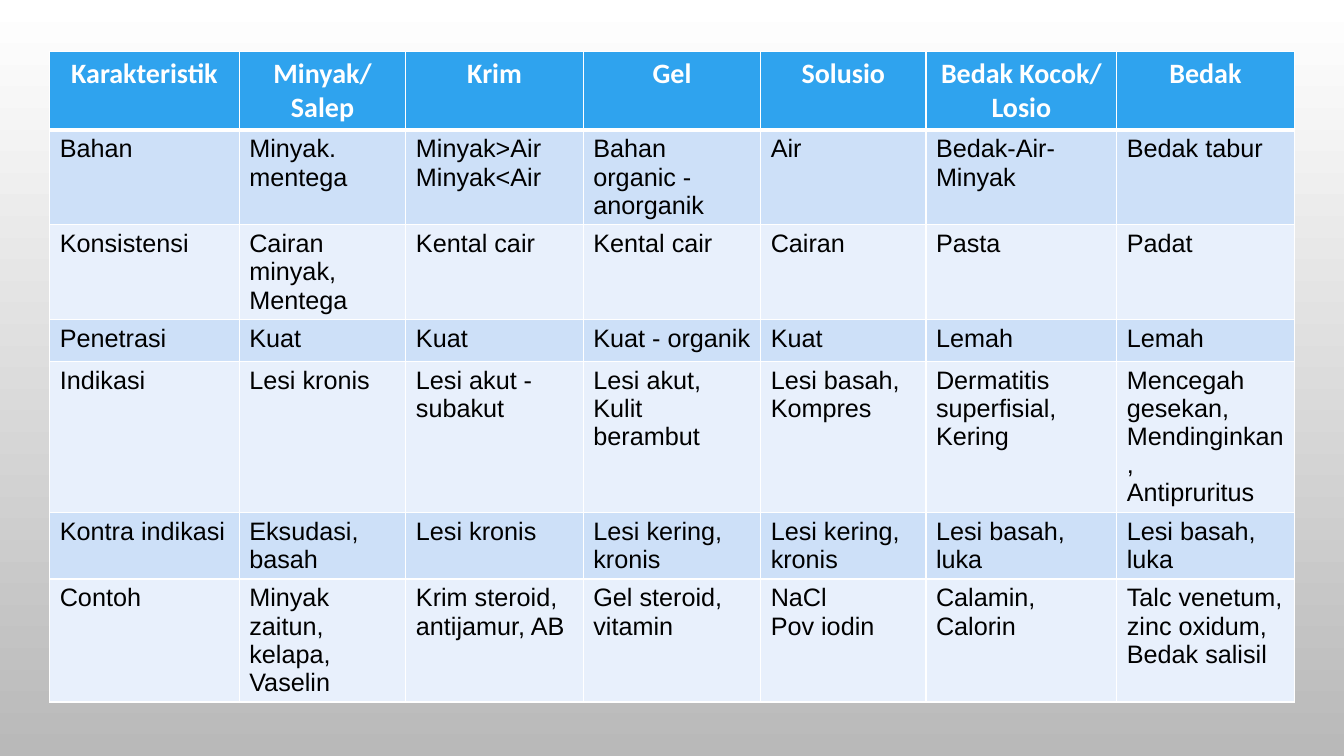
from dataclasses import dataclass

from lxml.etree import SubElement
from pptx import Presentation
from pptx.dml.color import RGBColor as Color
from pptx.enum.text import PP_ALIGN as Align
from pptx.oxml.ns import qn
from pptx.util import Inches, Pt


@dataclass(frozen=True)
class Theme:
    header: str = "2FA3EE"
    bands: tuple = ("CDE0F8", "E8F0FC")
    border: str = "FFFFFF"
    backdrop: tuple = ("FFFFFF", "B9B9B9")
    thin: int = 1
    thick: int = 3
    header_font: tuple = (("name", "Calibri"), ("size", Pt(20)), ("bold", True),
                          ("color", "FFFFFF"))
    body_font: tuple = (("name", "Arial"), ("size", Pt(18)), ("bold", False),
                        ("color", "000000"))


# Lengths are percentages of the slide's width or height
LEFT, TOP, HEIGHT, ROW_HEIGHT = 3.7, 6.8, 82.3, 5.5
COLUMNS = [14.1, 12.4, 13.2, 13.2, 12.3, 14.2, 13.2]

# A line break in a cell starts a new paragraph
PREPARATIONS = [
    ["Karakteristik", "Minyak/ Salep", "Krim", "Gel", "Solusio",
     "Bedak Kocok/ Losio", "Bedak"],
    ["Bahan", "Minyak.\nmentega", "Minyak>Air\nMinyak<Air",
     "Bahan organic - anorganik", "Air", "Bedak-Air-Minyak", "Bedak tabur"],
    ["Konsistensi", "Cairan minyak, Mentega", "Kental cair", "Kental cair",
     "Cairan", "Pasta", "Padat"],
    ["Penetrasi", "Kuat", "Kuat", "Kuat - organik", "Kuat", "Lemah", "Lemah"],
    ["Indikasi", "Lesi kronis", "Lesi akut - subakut",
     "Lesi akut,\nKulit berambut", "Lesi basah,\nKompres",
     "Dermatitis superfisial, Kering",
     "Mencegah gesekan,\nMendinginkan,\nAntipruritus"],
    ["Kontra indikasi", "Eksudasi, basah", "Lesi kronis",
     "Lesi kering, kronis", "Lesi kering, kronis", "Lesi basah, luka",
     "Lesi basah, luka"],
    ["Contoh", "Minyak zaitun, kelapa,\nVaselin",
     "Krim steroid, antijamur, AB", "Gel steroid, vitamin",
     "NaCl\nPov iodin", "Calamin,\nCalorin",
     "Talc venetum, zinc oxidum,\nBedak salisil"],
]


class PageBuilder:
    def __init__(self, deck, theme):
        self.deck, self.theme = deck, theme
        self.page = deck.slides.add_slide(deck.slide_layouts[6])

    def across(self, share):
        return round(self.deck.slide_width * share / 100)

    def down(self, share):
        return round(self.deck.slide_height * share / 100)

    def background(self):
        fill = self.page.background.fill
        fill.gradient()
        fill.gradient_angle = 270
        for stop, shade, position in zip(fill.gradient_stops, self.theme.backdrop, (0, 1)):
            stop.color.rgb = Color.from_string(shade)
            stop.position = position

    def table(self, rows, left, top, height, columns, row_height):
        frame = self.page.shapes.add_table(
            len(rows), len(columns), self.across(left), self.down(top),
            self.across(sum(columns)), self.down(height))
        table = frame.table
        for column, share in zip(table.columns, columns):
            column.width = self.across(share)
        for row in table.rows:
            row.height = self.down(row_height)
        frame.height = self.down(height)
        for row_number, texts in enumerate(rows):
            for column_number, text in enumerate(texts):
                self.cell(table.cell(row_number, column_number), text, row_number)

    def cell(self, cell, text, row_number):
        theme = self.theme
        is_header = row_number == 0
        shade = theme.header if is_header else theme.bands[(row_number - 1) % 2]
        cell.fill.solid()
        cell.fill.fore_color.rgb = Color.from_string(shade)
        # The rule under the header is heavier and shared with the row below
        self.borders(cell, {
            "a:lnL": theme.thin,
            "a:lnR": theme.thin,
            "a:lnT": theme.thick if row_number == 1 else theme.thin,
            "a:lnB": theme.thick if is_header else theme.thin,
        })
        cell.text = text
        for para in cell.text_frame.paragraphs:
            para.alignment = Align.CENTER if is_header else Align.LEFT
            for span in para.runs:
                self.style(span.font, theme.header_font if is_header else theme.body_font)

    def borders(self, cell, widths):
        properties = cell._tc.get_or_add_tcPr()
        for position, (side, width) in enumerate(widths.items()):
            line = SubElement(properties, qn(side), w=str(Pt(width)))
            SubElement(SubElement(line, qn("a:solidFill")), qn("a:srgbClr"),
                       val=self.theme.border)
            properties.insert(position, line)

    def style(self, font, formats):
        for name, value in dict(formats).items():
            if name == "color":
                font.color.rgb = Color.from_string(value)
            else:
                setattr(font, name, value)


def main():
    deck = Presentation()
    deck.slide_width, deck.slide_height = Inches(13.33), Inches(7.5)
    builder = PageBuilder(deck, Theme())
    builder.background()
    builder.table(PREPARATIONS, LEFT, TOP, HEIGHT, COLUMNS, ROW_HEIGHT)
    deck.save("out.pptx")


if __name__ == "__main__":
    main()
